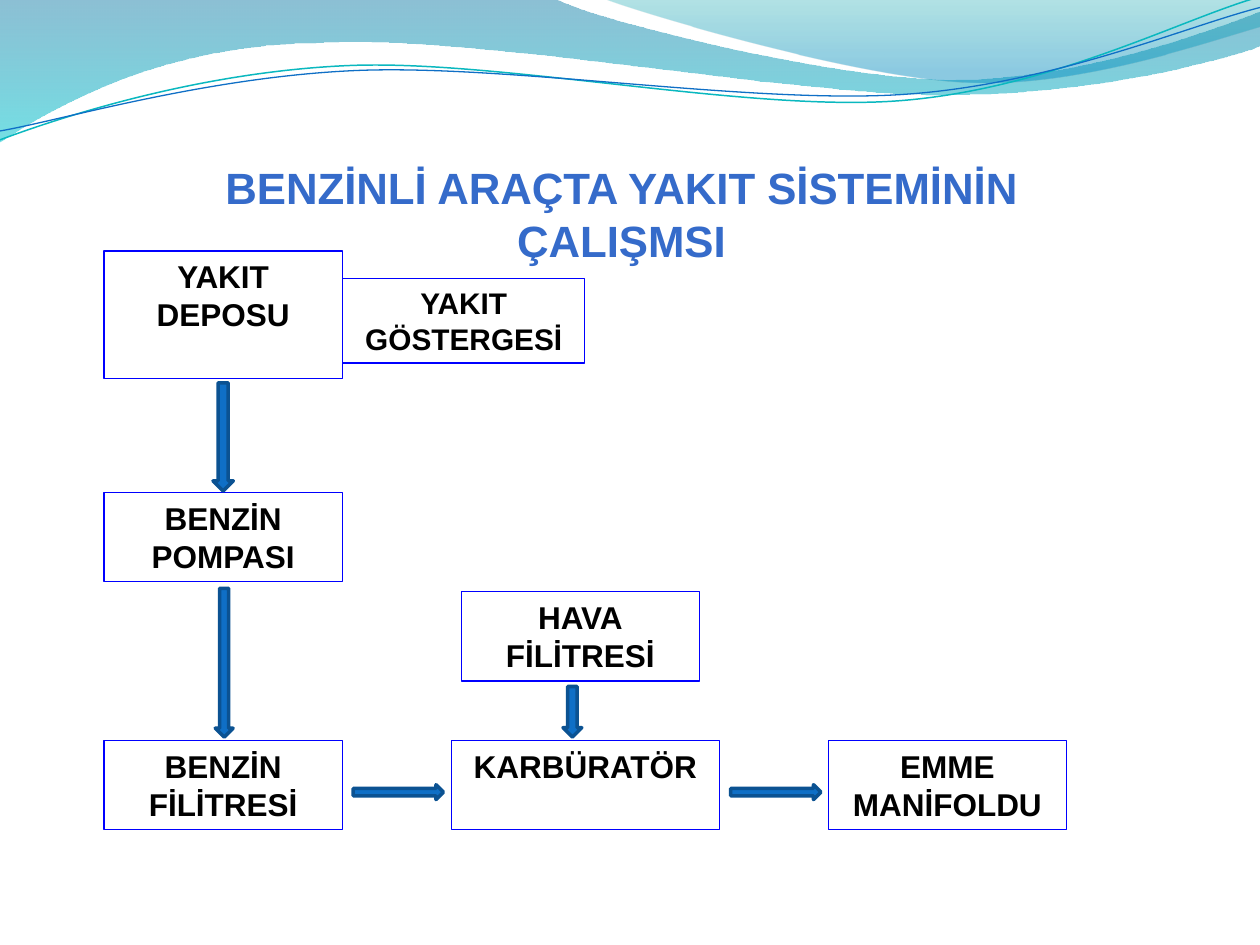
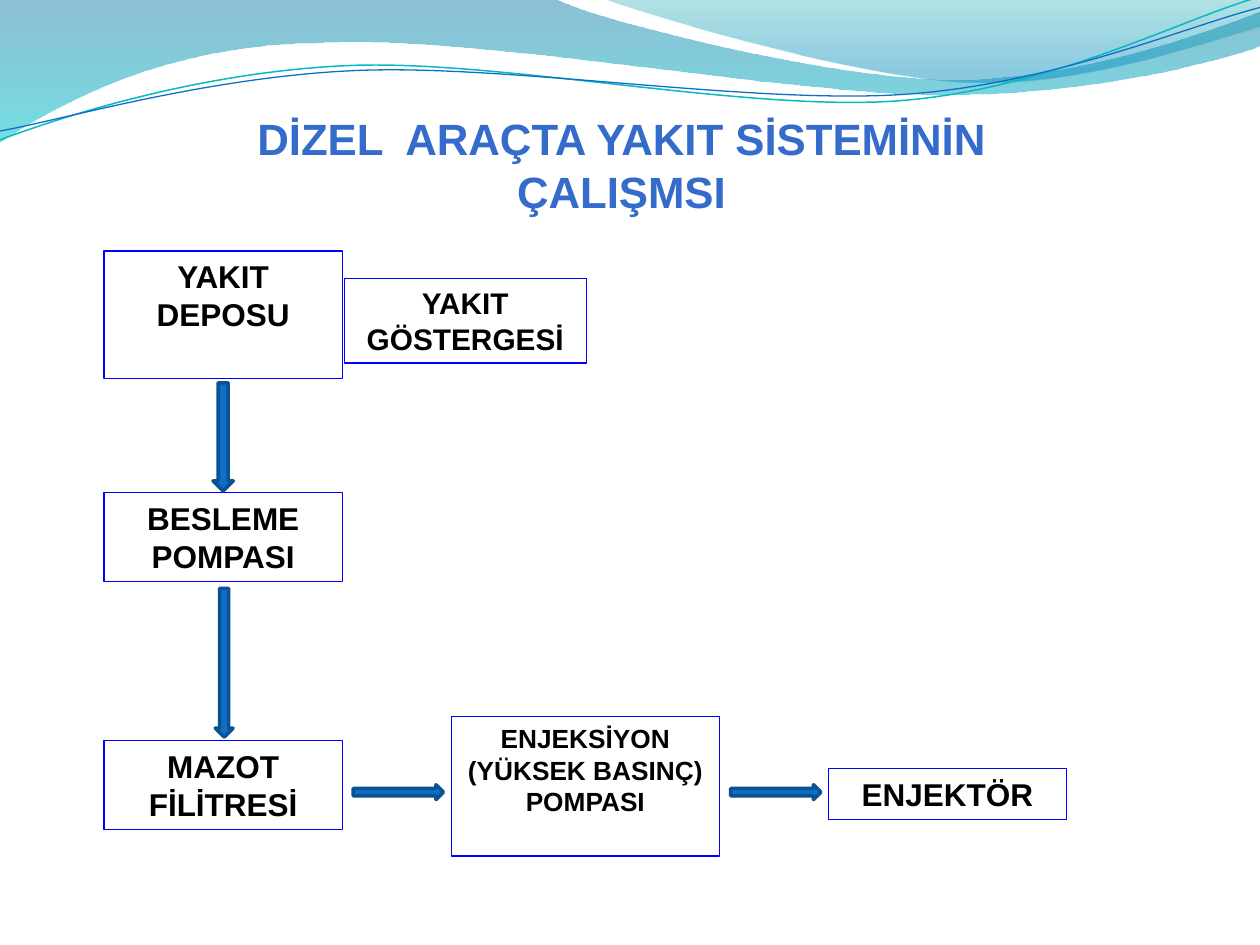
import math

from lxml import etree
from pptx import Presentation
from pptx import util as u
from pptx.dml import color
from pptx.enum import shapes, text
from pptx.oxml import ns

COLORS = {
    "box_line": "0000FF", "text": "000000", "title": "356BCA",
    "arrow": "0F6FC6", "arrow_line": "0B5292", "teal_line": "0AB8BF",
    "deep": "0074A1", "aqua": "00C6CF", "teal": "00A1A9", "sky": "008BBF",
}
FONT = "Arial"
INCH = 2.54
TILT = 357.3

WAVES = [
    dict(start=(0, -0.01),
         segments=[[(4.4, -0.01)],
                   [(4.76, 0.17), (6.64, 0.63), (7.58, 0.63)],
                   [(8.53, 0.63), (9.58, 0.26), (10, 0.09)],
                   [(10.01, 0.36)],
                   [(9.83, 0.44), (8.7, 0.76), (7.46, 0.75)],
                   [(6.22, 0.75), (3.82, 0.28), (2.57, 0.34)],
                   [(1.29, 0.35), (0.46, 0.83), (-0.01, 1.13)]],
         stops=[(0, "deep", 45), (1, "aqua", 55)]),
    dict(start=(4.79, -0.01),
         segments=[[(5.09, 0.11), (6.82, 0.62), (7.69, 0.65)],
                   [(8.56, 0.69), (9.61, 0.32), (10, 0.21)],
                   [(10, 0)]],
         stops=[(0, "teal", 30), (0.8, "sky", 45)]),
    dict(start=(0, 1.11), centre=(4.99, 0.58),
         segments=[[(0.48, 0.93), (1.58, 0.57), (2.77, 0.52)],
                   [(3.95, 0.47), (5.93, 0.89), (7.13, 0.8)],
                   [(8.33, 0.71), (9.38, 0.15), (9.98, -0.02)]],
         line=("teal_line", 0.85)),
    dict(start=(0, 1.04), centre=(5, 0.59),
         segments=[[(0.47, 0.96), (1.64, 0.61), (2.83, 0.56)],
                   [(4.03, 0.51), (5.97, 0.83), (7.17, 0.75)],
                   [(8.36, 0.67), (9.41, 0.21), (10, 0.06)]],
         line=("arrow", 0.75)),
]

COLUMN_X, BOX_W, BOX_H = 2.1, 4.8, 1.8
PUMP_Y, FLOW_Y = 9.93, 14.93
MIXER_X, MIXER_W, OUTLET_X = 9.1, 5.4, 16.7
TITLE_MID, TITLE_H = 12.63, 1.32

TANK = ("YAKIT DEPOSU", (COLUMN_X, 5.06, BOX_W, 2.57), 18)


def gauge(x):
    return "YAKIT GÖSTERGESİ", (x, 5.62, 4.88, 1.7), 17


def supply(pump, filter_name):
    return [(pump, (COLUMN_X, PUMP_Y, BOX_W, BOX_H), 18),
            (filter_name, (COLUMN_X, FLOW_Y, BOX_W, BOX_H), 18)]


COLUMN_MID = COLUMN_X + BOX_W / 2
DOWN_ARROWS = [(COLUMN_MID, 7.72, 0.41, 2.18), (COLUMN_MID + 0.02, 11.86, 0.36, 3)]
AIR_ARROW = (11.54, 13.84, 0.38, 1.02)
RIGHT_ARROWS = [(7.12, 15.82, 1.82, 0.3), (14.73, 15.82, 1.82, 0.3)]

SLIDES = [
    dict(title="BENZİNLİ ARAÇTA YAKIT SİSTEMİNİN ÇALIŞMSI", title_y=3.12, title_w=21.13,
         boxes=[TANK, *supply("BENZİN POMPASI", "BENZİN FİLİTRESİ"), gauge(6.91),
                ("KARBÜRATÖR", (MIXER_X, FLOW_Y, MIXER_W, BOX_H), 18),
                ("EMME\nMANİFOLDU", (OUTLET_X, FLOW_Y, BOX_W, BOX_H), 18),
                ("HAVA\nFİLİTRESİ", (9.3, 11.93, BOX_W, BOX_H), 18)],
         down=DOWN_ARROWS + [AIR_ARROW]),
    dict(title="DİZEL  ARAÇTA YAKIT SİSTEMİNİN ÇALIŞMSI", title_y=2.13, title_w=19.84,
         boxes=[TANK, *supply("BESLEME POMPASI", "MAZOT FİLİTRESİ"), gauge(6.94),
                ("ENJEKSİYON (YÜKSEK BASINÇ) POMPASI", (MIXER_X, 14.44, MIXER_W, 2.82), 15),
                ("ENJEKTÖR", (OUTLET_X, 15.5, BOX_W, 1.02), 18)],
         down=DOWN_ARROWS),
]


def rgb(name):
    return color.RGBColor.from_string(COLORS[name])


def write(tf, content, size=18, fill="text", wrap=True):
    tf.word_wrap = wrap
    tf.auto_size = text.MSO_AUTO_SIZE.NONE
    tf.vertical_anchor = text.MSO_ANCHOR.TOP
    tf.text = content
    for p in tf.paragraphs:
        p.alignment = text.PP_ALIGN.CENTER
        p.font.name, p.font.size, p.font.bold = FONT, u.Pt(size), True
        p.font.color.rgb = rgb(fill)


def add_preset(s, kind, place, line, width, fill=None):
    sp = s.shapes.add_shape(kind, *(u.Cm(v) for v in place))
    sp.shadow.inherit = False
    if fill:
        sp.fill.solid()
        sp.fill.fore_color.rgb = rgb(fill)
    else:
        sp.fill.background()
    sp.line.color.rgb = rgb(line)
    sp.line.width = u.Pt(width)
    return sp


def untilt(point, centre):
    angle = math.radians(360 - TILT)
    dx, dy = point[0] - centre[0], point[1] - centre[1]
    return (centre[0] + dx * math.cos(angle) - dy * math.sin(angle),
            centre[1] + dx * math.sin(angle) + dy * math.cos(angle))


def bend(sp, segments):
    corners = iter(sp.element.xpath(".//a:path/a:lnTo"))
    for segment in segments:
        first, *others = [next(corners) for _ in segment]
        if others:
            first.tag = ns.qn("a:cubicBezTo")
            for corner in others:
                first.append(corner[0])
                corner.getparent().remove(corner)


def add_wave(s, wave):
    points = [wave["start"], *(pt for segment in wave["segments"] for pt in segment)]
    if "centre" in wave:
        points = [untilt(pt, wave["centre"]) for pt in points]
    first, *rest = [(u.Cm(x * INCH), u.Cm(y * INCH)) for x, y in points]
    builder = s.shapes.build_freeform(*first)
    builder.add_line_segments(rest, close="stops" in wave)
    sp = builder.convert_to_shape()
    bend(sp, wave["segments"])
    sp.shadow.inherit = False
    if "line" in wave:
        name, width = wave["line"]
        sp.rotation = TILT
        sp.fill.background()
        sp.line.color.rgb = rgb(name)
        sp.line.width = u.Pt(width)
    else:
        sp.line.fill.background()
        sp.fill.gradient()
        sp.fill.gradient_angle = 270
        for stop, (position, name, _) in zip(sp.fill.gradient_stops, wave["stops"]):
            stop.position = position
            stop.color.rgb = rgb(name)
        tones = sp.element.xpath(".//a:gradFill//a:srgbClr")
        for tone, (_, _, opacity) in zip(tones, wave["stops"]):
            etree.SubElement(tone, ns.qn("a:alpha")).set("val", str(opacity * 1000))
    return sp


def add_flow_slide(prs, layout, data):
    s = prs.slides.add_slide(layout)
    title = s.shapes.title
    width = data["title_w"]
    title.left, title.top = u.Cm(TITLE_MID - width / 2), u.Cm(data["title_y"])
    title.width, title.height = u.Cm(width), u.Cm(TITLE_H)
    title.text_frame.margin_right = u.Cm(0.46)
    write(title.text_frame, data["title"], size=25, fill="title", wrap=False)
    for label, place, size in data["boxes"]:
        sp = add_preset(s, shapes.MSO_SHAPE.RECTANGLE, place, "box_line", 0.75)
        write(sp.text_frame, label, size=size)
    arrows = [(shapes.MSO_SHAPE.DOWN_ARROW, (mid - w / 2, y, w, h))
              for mid, y, w, h in data["down"]]
    arrows += [(shapes.MSO_SHAPE.RIGHT_ARROW, place) for place in RIGHT_ARROWS]
    for kind, place in arrows:
        add_preset(s, kind, place, "arrow_line", 2, fill="arrow")
    return s


def main():
    prs = Presentation()
    prs.slide_width, prs.slide_height = u.Cm(25.4), u.Cm(19.05)
    slides = [add_flow_slide(prs, prs.slide_layouts[5], data) for data in SLIDES]
    for wave in WAVES:
        prs.slide_master.shapes.element.append(add_wave(slides[0], wave).element)
    prs.save("out.pptx")


if __name__ == "__main__":
    main()
